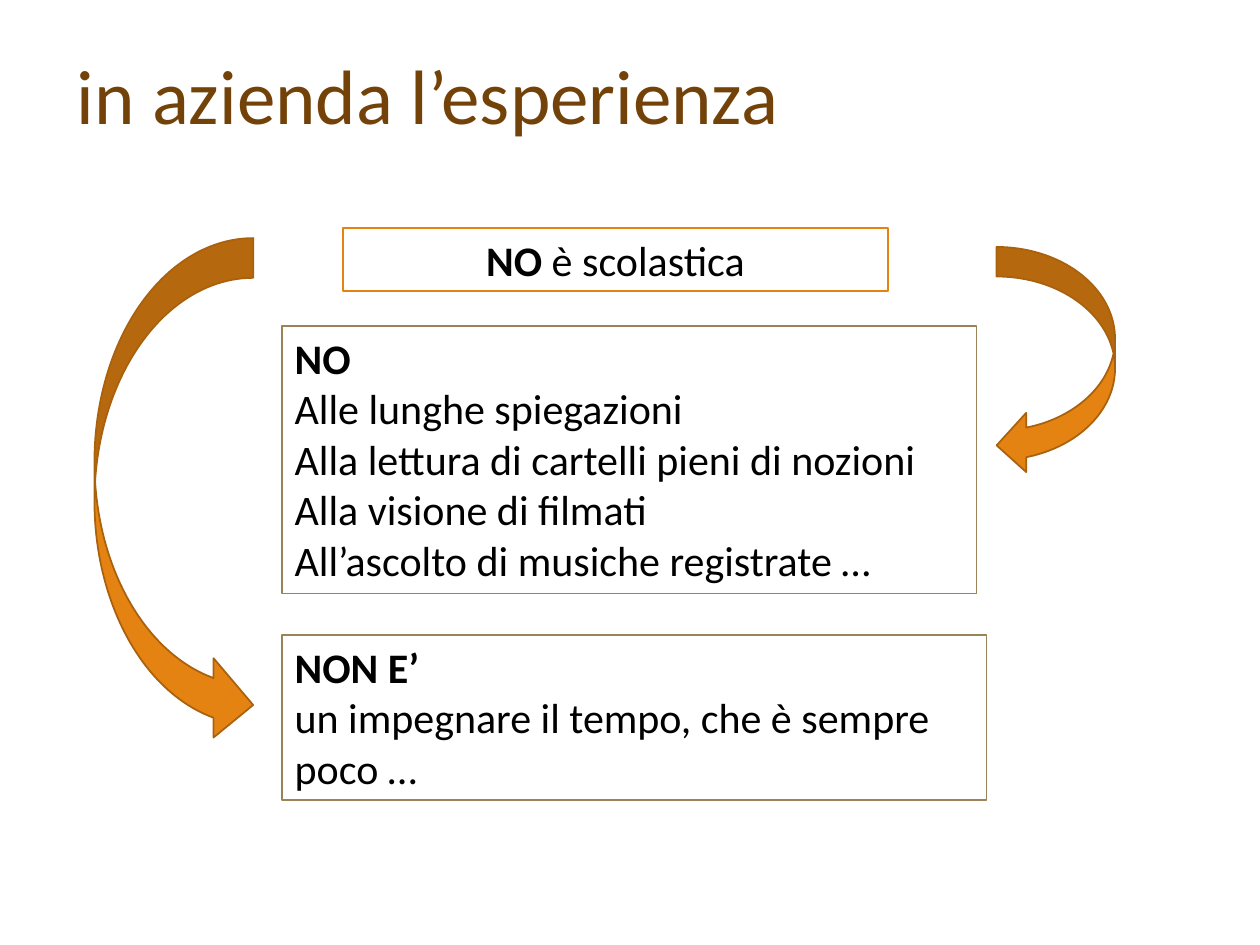
from pptx import Presentation
from pptx.dml.color import RGBColor
from pptx.enum.shapes import MSO_SHAPE
from pptx.enum.text import MSO_ANCHOR, MSO_AUTO_SIZE, PP_ALIGN
from pptx.util import Inches, Pt


def rgb(value):
    return RGBColor.from_string(value)


class SlideBuilder:
    body = {"name": "Calibri", "size": Pt(24)}
    heading = {"name": "Calibri", "size": Pt(44)}
    text_color = "000000"
    title_color = "724209"
    orange = "E48312"
    arrow_line = "A9610D"
    brown = "9B8357"
    white = "FFFFFF"

    def __init__(self, prs):
        self.s = prs.slides.add_slide(prs.slide_layouts[6])

    def add_run(self, p, text, color, style):
        r = p.add_run()
        r.text = text
        for name, value in style.items():
            setattr(r.font, name, value)
        r.font.color.rgb = rgb(color)

    def shape(self, kind, box, fill, line):
        sp = self.s.shapes.add_shape(kind, *map(Inches, box))
        sp.shadow.inherit = False
        sp.fill.solid()
        sp.fill.fore_color.rgb = rgb(fill)
        sp.line.color.rgb = rgb(line)
        sp.line.width = Pt(1)
        return sp

    def title(self, text, box):
        tf = self.s.shapes.add_textbox(*map(Inches, box)).text_frame
        tf.word_wrap = True
        tf.vertical_anchor = MSO_ANCHOR.MIDDLE
        self.add_run(tf.paragraphs[0], text, self.title_color, self.heading)

    def text_box(self, paragraphs, box, line, align=PP_ALIGN.LEFT):
        tf = self.shape(MSO_SHAPE.RECTANGLE, box, self.white, line).text_frame
        tf.word_wrap = True
        tf.auto_size = MSO_AUTO_SIZE.SHAPE_TO_FIT_TEXT
        tf.vertical_anchor = MSO_ANCHOR.TOP
        for i, runs in enumerate(paragraphs):
            p = tf.add_paragraph() if i else tf.paragraphs[0]
            p.alignment = align
            for text, bold in runs:
                self.add_run(p, text, self.text_color, {**self.body, "bold": bold})

    def arrow(self, kind, box):
        self.shape(kind, box, self.orange, self.arrow_line)


def main():
    prs = Presentation()
    prs.slide_width, prs.slide_height = Inches(10), Inches(7.5)
    b = SlideBuilder(prs)

    b.text_box([[("NO", True), (" è scolastica", False)]],
               (2.72, 1.81, 4.33, 0.5), b.orange, PP_ALIGN.CENTER)

    refusals = ["Alle lunghe spiegazioni",
                "Alla lettura di cartelli pieni di nozioni",
                "Alla visione di filmati",
                "All’ascolto di musiche registrate …"]
    b.text_box([[("NO", True)]] + [[(text, False)] for text in refusals],
               (2.24, 2.59, 5.51, 2.12), b.brown)

    b.text_box([[("NON E’", True)],
                [("un impegnare il tempo, che è sempre poco …", False)]],
               (2.24, 5.04, 5.59, 1.31), b.brown)

    b.arrow(MSO_SHAPE.CURVED_LEFT_ARROW, (7.91, 1.96, 0.94, 1.81))
    b.arrow(MSO_SHAPE.CURVED_RIGHT_ARROW, (0.75, 1.89, 1.26, 4.02))
    b.title("in azienda l’esperienza", (0.51, 0.28, 7.61, 0.93))

    prs.save("out.pptx")


if __name__ == "__main__":
    main()
